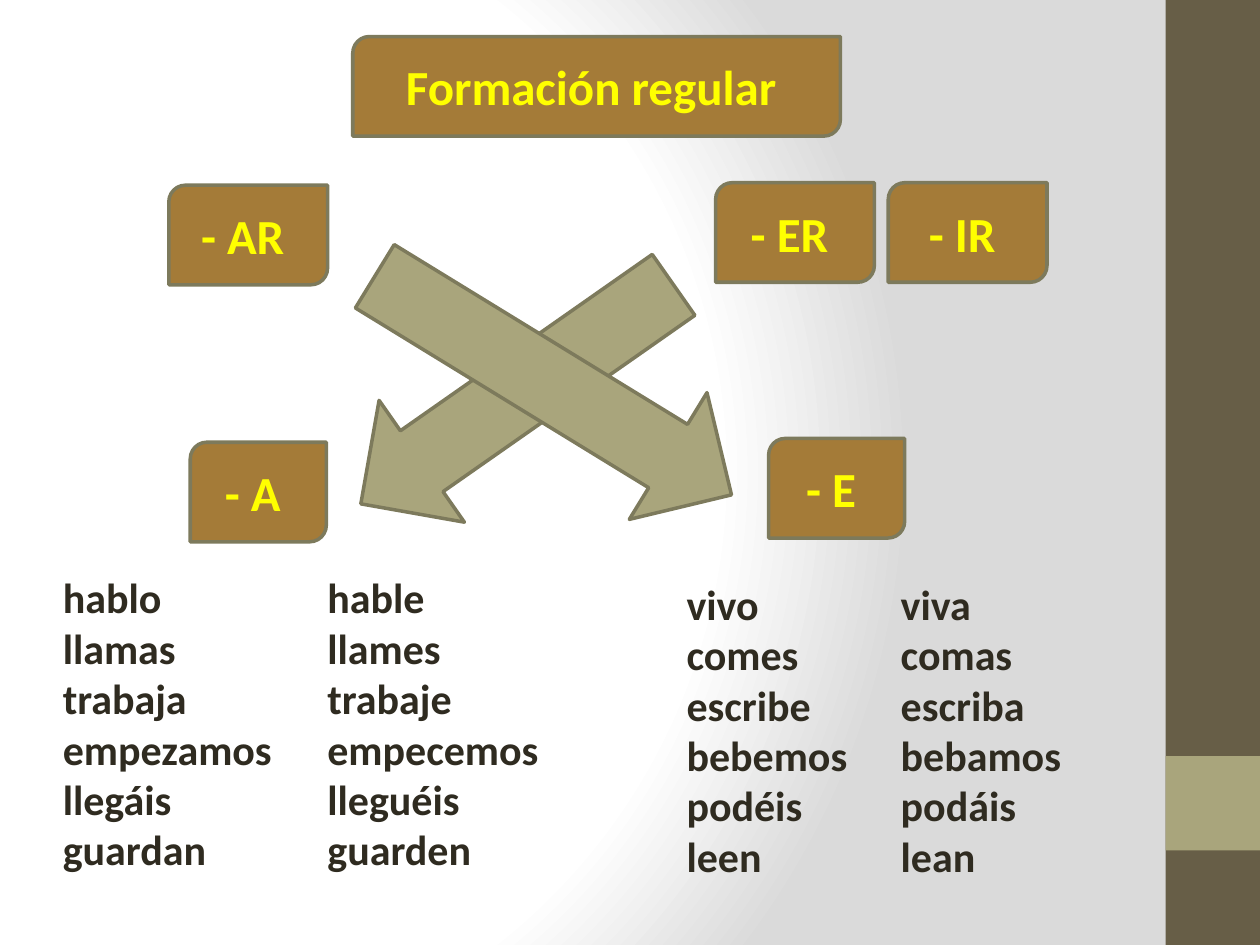
from pptx import Presentation
from pptx import util as u
from pptx.dml.color import RGBColor
from pptx.enum import shapes, text
from pptx.oxml import parse_xml
from pptx.oxml.ns import nsdecls

BROWN, OLIVE, EDGE = "A47B38", "A9A57C", "7D7A5C"
YELLOW, INK, BAND = "FFFF00", "2F2B20", "675E47"
LABEL_HEIGHT, ARROW_HEIGHT = 0.79, 1.18
FORM_TOP, FORM_HEIGHT = 4.49, 2.52


def rgb(value):
    """Turn a hex string into a colour."""
    return RGBColor.from_string(value)


def add_block(slide, kind, box, fill, edge=None):
    """Place a filled preset shape in a box given in inches."""
    block = slide.shapes.add_shape(kind, *map(u.Inches, box))
    block.shadow.inherit = False
    block.fill.solid()
    block.fill.fore_color.rgb = rgb(fill)
    if edge:
        block.line.color.rgb = rgb(edge)
        block.line.width = u.Pt(2)
    else:
        block.line.fill.background()
    return block


def style_font(paragraph, size, color):
    """Set the bold face shared by all wording."""
    font = paragraph.font
    font.name, font.size, font.bold = "Calibri", u.Pt(size), True
    font.color.rgb = rgb(color)


def paint_background(slide):
    """Shade the slide from white to grey, radiating from the left."""
    stops = "".join(
        f'<a:gs pos="{share * 1000}"><a:srgbClr val="{color}"/></a:gs>'
        for share, color in ((0, "FFFFFF"), (75, "FFFFFF"), (100, "DADADA"))
    )
    background = parse_xml(
        f'<p:bg {nsdecls("p", "a")}><p:bgPr><a:gradFill rotWithShape="1">'
        f'<a:gsLst>{stops}</a:gsLst><a:path path="circle">'
        '<a:fillToRect l="20000" t="50000" r="100000" b="50000"/></a:path>'
        "</a:gradFill><a:effectLst/></p:bgPr></p:bg>"
    )
    slide.element.cSld.insert(0, background)


def add_side_band(slide, left, top, width, height):
    """Draw the right-hand band with its square accent."""
    rectangle = shapes.MSO_SHAPE.RECTANGLE
    add_block(slide, rectangle, (left, top, width, height), BAND)
    accent_top = top + height - 2 * width
    add_block(slide, rectangle, (left, accent_top, width, width), OLIVE)


def add_crossing(slide, left, top):
    """Draw the two crossed arrows."""
    for dx, dy, width, angle in ((0, 0.07, 3.03, 325), (0.14, 0, 3.32, 211.5)):
        box = (left + dx, top + dy, width, ARROW_HEIGHT)
        arrow = add_block(slide, shapes.MSO_SHAPE.LEFT_ARROW, box, OLIVE, EDGE)
        arrow.rotation = angle


def add_label(slide, wording, left, top, width):
    """Place a brown label with yellow centred wording."""
    box = (left, top, width, LABEL_HEIGHT)
    label = add_block(slide, shapes.MSO_SHAPE.ROUND_2_DIAG_RECTANGLE, box, BROWN, EDGE)
    frame = label.text_frame
    frame.vertical_anchor = text.MSO_ANCHOR.MIDDLE
    frame.text = wording
    frame.paragraphs[0].alignment = text.PP_ALIGN.CENTER
    style_font(frame.paragraphs[0], 28, YELLOW)


def add_forms(slide, forms, left, top, width):
    """List verb forms one below the other."""
    column = slide.shapes.add_textbox(*map(u.Inches, (left, top, width, FORM_HEIGHT)))
    frame = column.text_frame
    frame.word_wrap = False
    frame.auto_size = text.MSO_AUTO_SIZE.SHAPE_TO_FIT_TEXT
    frame.text = "\n".join(forms.split())
    for paragraph in frame.paragraphs:
        style_font(paragraph, 24, INK)


def main():
    """Build the slide on regular formation."""
    deck = Presentation()
    deck.slide_width, deck.slide_height = u.Inches(10), u.Inches(7.5)
    slide = deck.slides.add_slide(deck.slide_layouts[6])
    paint_background(slide)
    add_side_band(slide, 9.25, 0, 0.75, 7.5)
    add_crossing(slide, 2.59, 2.47)

    for label in (
        ("Formación regular ", 2.8, 0.29, 3.87),
        ("- AR ", 1.34, 1.47, 1.26),
        ("- ER ", 5.68, 1.45, 1.26),
        ("- IR ", 7.05, 1.45, 1.26),
        ("- E ", 6.1, 3.48, 1.08),
        ("- A ", 1.51, 3.51, 1.08),
    ):
        add_label(slide, *label)

    for column in (
        ("hablo llamas trabaja empezamos llegáis guardan", 0.4, FORM_TOP, 1.88),
        ("hable llames trabaje empecemos lleguéis guarden", 2.5, FORM_TOP, 1.9),
        ("vivo comes escribe bebemos podéis leen", 5.35, FORM_TOP + 0.05, 1.49),
        ("viva comas escriba bebamos podáis lean", 7.05, FORM_TOP + 0.05, 1.49),
    ):
        add_forms(slide, *column)
    deck.save("out.pptx")


if __name__ == "__main__":
    main()
